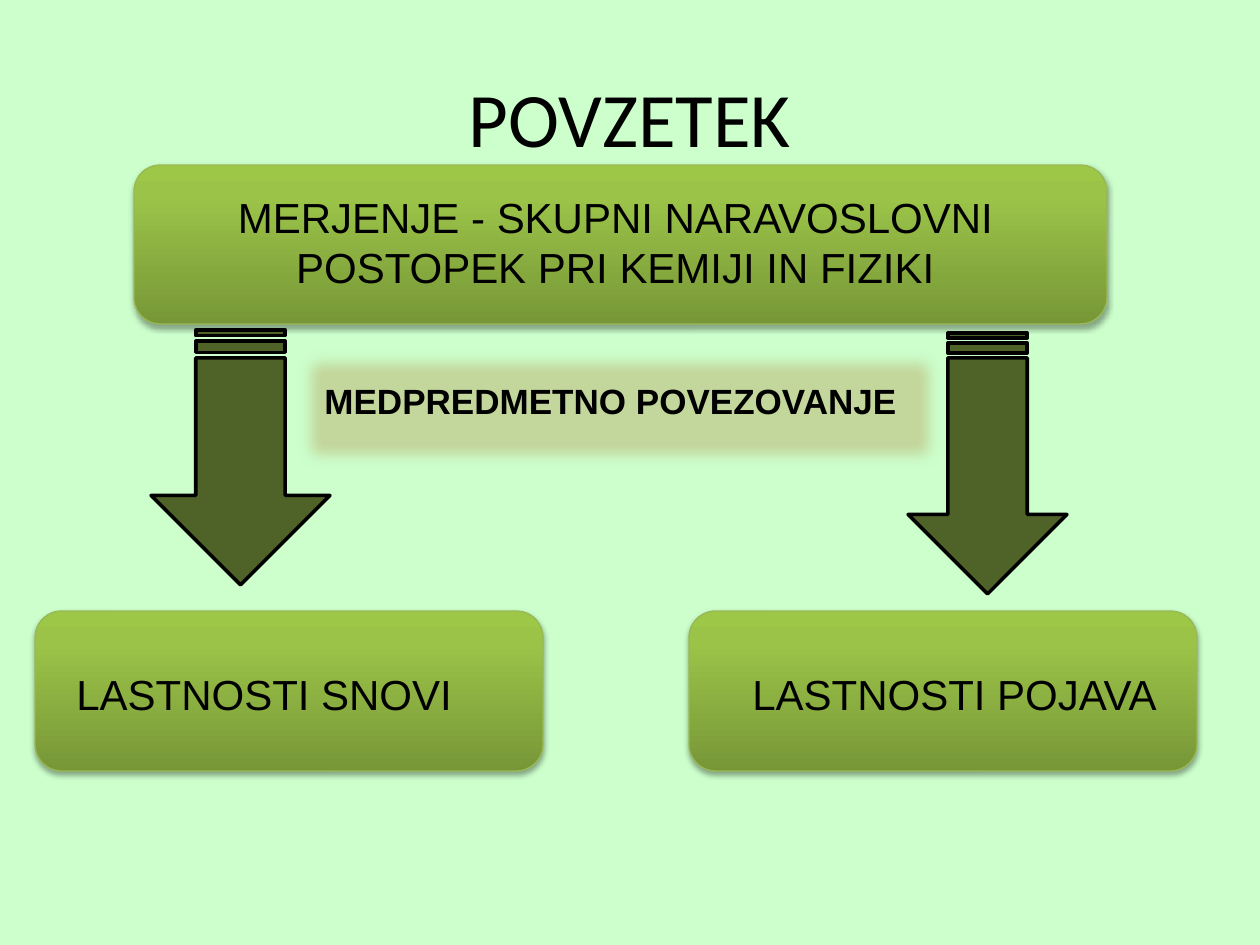
import dataclasses

import lxml.etree
import pptx
import pptx.dml.color
import pptx.enum.shapes
import pptx.enum.text
import pptx.oxml
import pptx.oxml.ns
import pptx.util

RGB = pptx.dml.color.RGBColor
SHAPE = pptx.enum.shapes.MSO_SHAPE
ALIGN = pptx.enum.text.PP_ALIGN
ANCHOR = pptx.enum.text.MSO_ANCHOR
NS = pptx.oxml.ns.nsdecls("a")
qn = pptx.oxml.ns.qn

EMU_PER_PX = 914400 / 126
MINT = RGB(0xCC, 0xFF, 0xCC)
BLACK = RGB(0, 0, 0)
OLIVE = RGB(0x4F, 0x62, 0x28)
KHAKI = RGB(0xC3, 0xD6, 0x9B)
STEEL = RGB(0x3A, 0x5F, 0x8C)
LEAF = RGB(0x98, 0xB9, 0x55)
GRADIENT = (
    (0, RGB(0x77, 0x97, 0x37)),
    (80, RGB(0x9B, 0xC3, 0x48)),
    (100, RGB(0x9D, 0xC7, 0x46)),
)


@dataclasses.dataclass(frozen=True)
class Box:
    x: int
    y: int
    w: int
    h: int

    def emu(self) -> list[int]:
        return [round(v * EMU_PER_PX) for v in dataclasses.astuple(self)]


@dataclasses.dataclass(frozen=True)
class Label:
    box: Box
    text: str
    size: int = 24
    font: str = "Arial"
    bold: bool = False
    align: ALIGN = ALIGN.LEFT
    anchor: ANCHOR = ANCHOR.TOP


TITLE = Label(Box(63, 38, 1134, 157), "POVZETEK", 44, "Calibri",
              align=ALIGN.CENTER, anchor=ANCHOR.MIDDLE)
MEASURING = Label(Box(174, 185, 883, 115),
                  "MERJENJE - SKUPNI NARAVOSLOVNI POSTOPEK PRI KEMIJI IN FIZIKI",
                  align=ALIGN.CENTER)
PROPERTIES = (
    Label(Box(64, 662, 446, 63), "LASTNOSTI SNOVI"),
    Label(Box(740, 662, 486, 63), "LASTNOSTI POJAVA"),
)
LINKING = Label(Box(292 + 20, 373, 625, 55), "MEDPREDMETNO POVEZOVANJE", 20, bold=True)
MEASURING_PANEL = Box(134, 165, 973, 159)
PROPERTY_PANELS = [Box(x, 611, 508, 160) for x in (35, 689)]
ARROWS = (Box(113, 368, 255, 179), Box(857, 384, 261, 159))
LINKING_PANEL = Box(292, 344, 655, 129)


def add_shape(slide, kind: SHAPE, box: Box, line: RGB, width: float):
    sp = slide.shapes.add_shape(kind, *box.emu())
    sp.line.color.rgb = line
    sp.line.width = pptx.util.Pt(width)
    sp.shadow.inherit = False
    return sp


def add_effect(sp, xml: str) -> None:
    effects = sp.element.spPr.find(qn("a:effectLst"))
    effects.append(pptx.oxml.parse_xml(xml))


def add_panel(slide, box: Box) -> None:
    sp = add_shape(slide, SHAPE.ROUNDED_RECTANGLE, box, LEAF, 0.75)
    stops = "".join(
        f'<a:gs pos="{pos * 1000}"><a:srgbClr val="{color}"/></a:gs>'
        for pos, color in GRADIENT
    )
    gradient = pptx.oxml.parse_xml(
        f'<a:gradFill {NS} rotWithShape="1"><a:gsLst>{stops}</a:gsLst>'
        '<a:lin ang="16200000" scaled="0"/></a:gradFill>'
    )
    sp.element.spPr.find(qn("a:prstGeom")).addnext(gradient)
    add_effect(
        sp,
        f'<a:outerShdw {NS} blurRad="40000" dist="23000" dir="5400000" rotWithShape="0">'
        f'<a:srgbClr val="{BLACK}"><a:alpha val="35000"/></a:srgbClr></a:outerShdw>',
    )


def add_arrow(slide, box: Box) -> None:
    sp = add_shape(slide, SHAPE.STRIPED_RIGHT_ARROW, box, BLACK, 2)
    sp.fill.solid()
    sp.fill.fore_color.rgb = OLIVE
    sp.rotation = 90


def add_soft_panel(slide, box: Box) -> None:
    sp = add_shape(slide, SHAPE.RECTANGLE, box, STEEL, 2)
    sp.fill.solid()
    sp.fill.fore_color.rgb = KHAKI
    add_effect(sp, f'<a:softEdge {NS} rad="127000"/>')


def add_label(slide, label: Label) -> None:
    tf = slide.shapes.add_textbox(*label.box.emu()).text_frame
    tf.word_wrap = True
    tf.vertical_anchor = label.anchor
    p = tf.paragraphs[0]
    p.alignment = label.align
    r = p.add_run()
    r.text = label.text
    r.font.name = label.font
    r.font.size = pptx.util.Pt(label.size)
    r.font.bold = label.bold
    r.font.color.rgb = BLACK


def main() -> None:
    prs = pptx.Presentation()
    prs.slide_width = pptx.util.Inches(10)
    prs.slide_height = pptx.util.Inches(7.5)
    s = prs.slides.add_slide(prs.slide_layouts[6])
    s.background.fill.solid()
    s.background.fill.fore_color.rgb = MINT

    add_label(s, TITLE)
    add_panel(s, MEASURING_PANEL)
    add_label(s, MEASURING)
    for box in ARROWS:
        add_arrow(s, box)
    for box in PROPERTY_PANELS:
        add_panel(s, box)
    for label in PROPERTIES:
        add_label(s, label)
    add_soft_panel(s, LINKING_PANEL)
    add_label(s, LINKING)
    prs.save("out.pptx")


if __name__ == "__main__":
    main()
